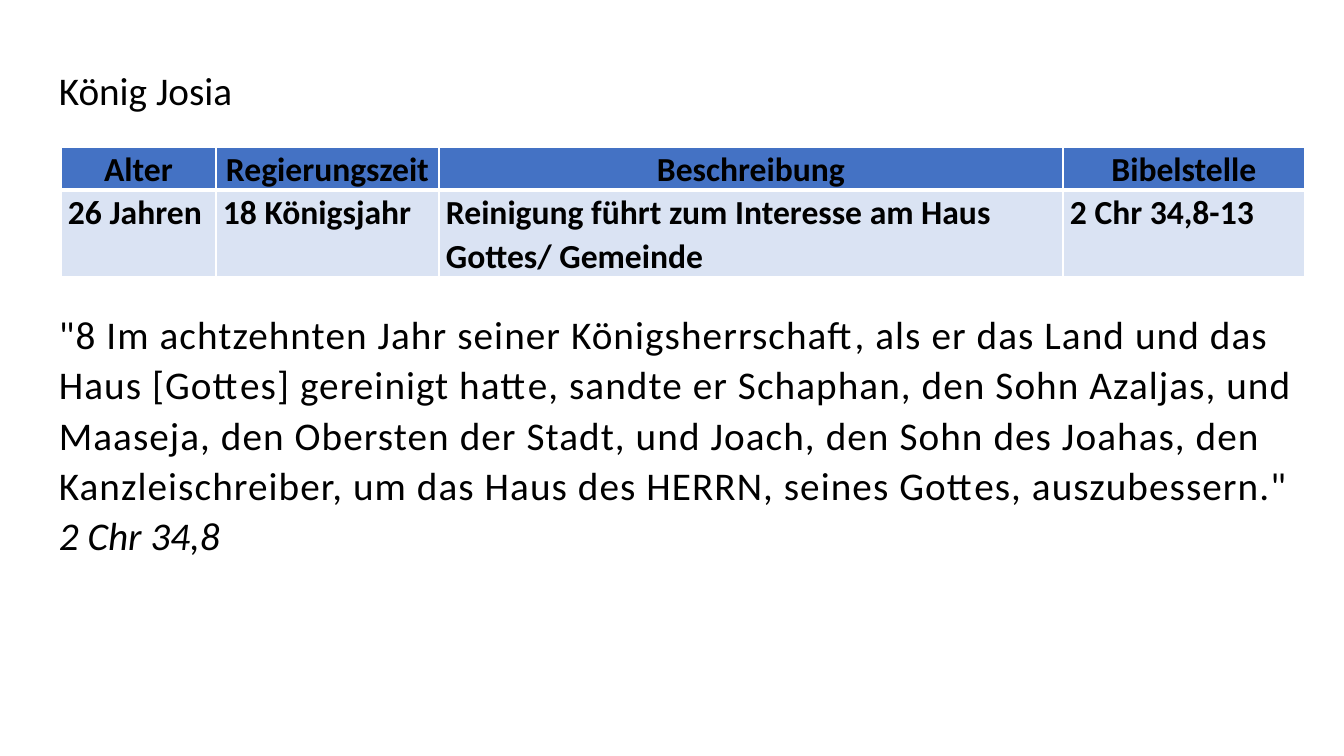
import pptx
import pptx.dml.color
import pptx.enum.text
import pptx.oxml.ns
import pptx.util
from lxml import etree

PX = 914400 / 100.8
COLORS = {"text": "000000", "header": "4472C4", "row": "DAE3F3", "border": "FFFFFF"}
ALIGN = pptx.enum.text.PP_ALIGN
HEADERS = ["Alter", "Regierungszeit", "Beschreibung", "Bibelstelle"]
VALUES = ["26 Jahren", "18 Königsjahr",
          "Reinigung führt zum Interesse am Haus Gottes/ Gemeinde", "2 Chr 34,8-13"]
COLUMN_WIDTHS = [155, 223, 624, 242]
ROW_HEIGHTS = [43, 86]
VERSE = ('"8 Im achtzehnten Jahr seiner Königsherrschaft, als er das Land und das '
         'Haus [Gottes] gereinigt hatte, sandte er Schaphan, den Sohn Azaljas, und '
         'Maaseja, den Obersten der Stadt, und Joach, den Sohn des Joahas, den '
         'Kanzleischreiber, um das Haus des HERRN, seines Gottes, auszubessern." ')


def px(n):
    return pptx.util.Emu(round(n * PX))


def rgb(name):
    return pptx.dml.color.RGBColor.from_string(COLORS[name])


def add_text(p, text, size=28, bold=False, italic=False, spacing=0, align=ALIGN.LEFT):
    p.alignment = align
    p.line_spacing = 1.07
    r = p.add_run()
    r.text = text
    r.font.name = "Calibri"
    r.font.size = pptx.util.Pt(size)
    r.font.bold = bold
    r.font.italic = italic
    r.font.color.rgb = rgb("text")
    if spacing:
        r.font._element.set("spc", str(round(spacing * 100)))


def add_box(slide, box, wrap):
    tf = slide.shapes.add_textbox(*map(px, box)).text_frame
    tf.word_wrap = wrap
    tf.auto_size = pptx.enum.text.MSO_AUTO_SIZE.SHAPE_TO_FIT_TEXT
    return tf.paragraphs[0]


def add_border(cell, side, width):
    qn = pptx.oxml.ns.qn
    ln = etree.SubElement(cell._tc.get_or_add_tcPr(), qn("a:ln" + side),
                          w=str(pptx.util.Pt(width)))
    fill = etree.SubElement(ln, qn("a:solidFill"))
    etree.SubElement(fill, qn("a:srgbClr"), val=COLORS["border"])


def add_title(slide, box):
    p = add_box(slide, box, False)
    p.space_before = pptx.util.Pt(12)
    add_text(p, "König Josia")


def add_reign_table(slide, left, top):
    box = (left, top, sum(COLUMN_WIDTHS), sum(ROW_HEIGHTS))
    table = slide.shapes.add_table(2, len(HEADERS), *map(px, box)).table
    for column, width in zip(table.columns, COLUMN_WIDTHS):
        column.width = px(width)
    for row, height in zip(table.rows, ROW_HEIGHTS):
        row.height = px(height)
    styles = [(HEADERS, "header", ALIGN.CENTER, {"L": 1, "R": 1, "T": 1, "B": 3}),
              (VALUES, "row", ALIGN.LEFT, {"L": 1, "R": 1, "T": 3, "B": 1})]
    for row, (texts, fill, align, borders) in zip(table.rows, styles):
        for cell, text in zip(row.cells, texts):
            cell.margin_left = cell.margin_right = px(7)
            cell.margin_top = cell.margin_bottom = 0
            for side, width in borders.items():
                add_border(cell, side, width)
            cell.fill.solid()
            cell.fill.fore_color.rgb = rgb(fill)
            add_text(cell.text_frame.paragraphs[0], text, size=24, bold=True, align=align)


def add_verse(slide, box, indent):
    p = add_box(slide, box, True)
    p.space_after = pptx.util.Pt(2)
    pPr = p._p.get_or_add_pPr()
    pPr.set("marL", str(px(indent)))
    pPr.set("indent", "0")
    add_text(p, VERSE, spacing=0.8)
    add_text(p, "2 Chr 34,8", italic=True)


def main():
    prs = pptx.Presentation()
    prs.slide_width = px(1344)
    prs.slide_height = px(756)
    slide = prs.slides.add_slide(prs.slide_layouts[6])
    add_title(slide, (49, 58, 196, 58))
    add_reign_table(slide, 61, 147)
    add_verse(slide, (0, 302, 1305, 262), 49)
    prs.save("out.pptx")


if __name__ == "__main__":
    main()
